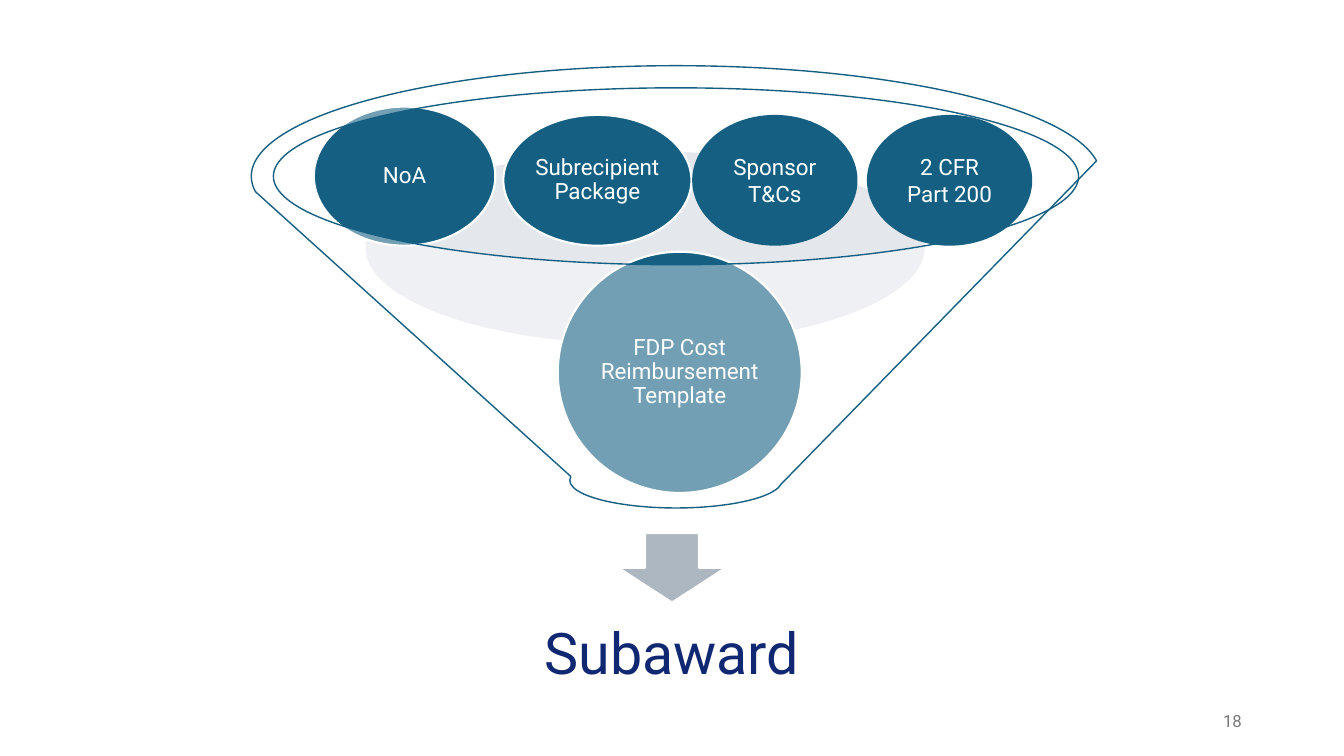
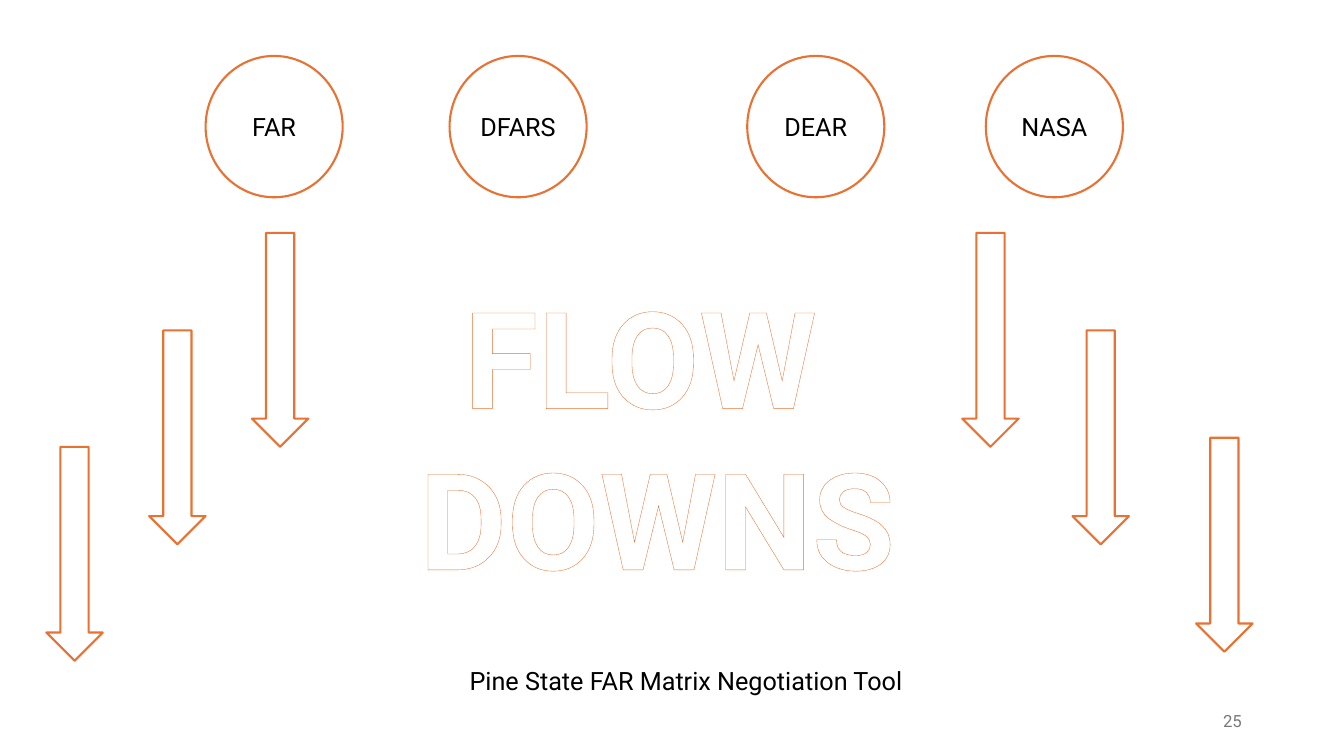
from lxml.etree import SubElement
from pptx import Presentation
from pptx.dml.color import RGBColor
from pptx.enum.shapes import MSO_SHAPE
from pptx.enum.text import MSO_ANCHOR, MSO_AUTO_SIZE, PP_ALIGN
from pptx.oxml import parse_xml
from pptx.oxml.ns import nsdecls, qn
from pptx.util import Inches, Pt

WIDTH, HEIGHT = Inches(13.33), Inches(7.5)
FONT = "Roboto"
COLORS = {
    "white": "FFFFFF",
    "black": "000000",
    "navy": "0F2871",
    "teal": "156082",
    "orange": "E97132",
    "arrow": "ACB7C1",
    "mist": "BDC5CD",
    "number": "797979",
}


def rgb(name):
    return RGBColor.from_string(COLORS[name])


def area(left, top, width, height):
    """Turn percentages of the slide into lengths."""
    return (int(WIDTH * left / 100), int(HEIGHT * top / 100),
            int(WIDTH * width / 100), int(HEIGHT * height / 100))


def write(holder, lines, size, color, align=PP_ALIGN.CENTER,
          anchor=MSO_ANCHOR.MIDDLE, spacing=1.0, inset=None, bold=False):
    frame = holder.text_frame
    frame.text = "\n".join(lines)
    frame.word_wrap = True
    frame.auto_size = MSO_AUTO_SIZE.NONE
    frame.vertical_anchor = anchor
    if inset is not None:
        frame.margin_left = frame.margin_right = Inches(inset)
        frame.margin_top = frame.margin_bottom = Inches(inset)
    for paragraph in frame.paragraphs:
        paragraph.alignment = align
        paragraph.line_spacing = spacing
        paragraph.font.name = FONT
        paragraph.font.size = Pt(size)
        paragraph.font.bold = bold
        paragraph.font.color.rgb = rgb(color)


def add_title(slide, box, lines, size, color, **style):
    title = slide.shapes.title
    title.left, title.top, title.width, title.height = area(*box)
    write(title, lines, size, color, **style)
    return title


def add_label(slide, box, text, size, color, **style):
    label = slide.shapes.add_textbox(*area(*box))
    write(label, [text], size, color, **style)


def add_figure(slide, kind, box, fill, line=None, weight=1.5, opacity=None):
    figure = slide.shapes.add_shape(kind, *area(*box))
    figure.shadow.inherit = False
    figure.fill.solid()
    figure.fill.fore_color.rgb = rgb(fill)
    if opacity:
        fill_color = figure.fill._xPr.find(".//" + qn("a:srgbClr"))
        SubElement(fill_color, qn("a:alpha"), val=str(opacity * 1000))
    if line:
        figure.line.color.rgb = rgb(line)
        figure.line.width = Pt(weight)
    else:
        figure.line.fill.background()
    return figure


def outline_text(holder, color, weight):
    for paragraph in holder.text_frame.paragraphs:
        for run in paragraph.runs:
            run.font.color.rgb = rgb("white")
            run.font._element.insert(0, parse_xml(
                f'<a:ln {nsdecls("a")} w="{Pt(weight)}"><a:solidFill>'
                f'<a:srgbClr val="{COLORS[color]}"/></a:solidFill></a:ln>'))


def start_slide(deck, number):
    slide = deck.slides.add_slide(deck.slide_layouts.get_by_name("Title Only"))
    add_label(slide, (70.65, 92.7, 22.5, 5.3), number, 12, "number",
              align=PP_ALIGN.RIGHT)
    return slide


def build_funnel(deck):
    slide = start_slide(deck, "18")
    add_figure(slide, MSO_SHAPE.OVAL, (27.2, 20, 41.6, 25.6), "mist", opacity=40)

    # Result below the funnel
    add_figure(slide, MSO_SHAPE.DOWN_ARROW, (46, 70.5, 8, 9.2), "arrow", "white")
    add_title(slide, (30.7, 78.1, 38.6, 17.2), ["Subaward"], 41, "navy",
              spacing=0.9, inset=0.32)

    # Documents inside the funnel
    inside = [
        ("FDP Cost Reimbursement Template", (41.5, 33.3, 18.15, 31.9)),
        ("NoA", (23.35, 14.1, 13.5, 18.4)),
        ("Subrecipient Package", (37.45, 15.2, 14, 17.3)),
    ]
    for text, box in inside:
        document = add_figure(slide, MSO_SHAPE.OVAL, box, "teal", "white")
        write(document, [text], 16, "white", spacing=0.9, inset=0.02)

    add_figure(slide, MSO_SHAPE.FUNNEL, (18.7, 8.7, 63.2, 58.5), "white",
               "teal", weight=1, opacity=40)

    # Documents in front of the funnel
    for text, left in (("2 CFR Part 200", 64.5), ("Sponsor T&Cs", 51.5)):
        document = add_figure(slide, MSO_SHAPE.FLOWCHART_CONNECTOR,
                              (left, 15.2, 12.3, 17.3), "teal")
        write(document, [text], 16, "white")


def build_flow_downs(deck):
    slide = start_slide(deck, "25")
    heading = add_title(slide, (29.1, 35.6, 39.6, 44.4), ["FLOW ", "DOWNS"],
                        96, "white", anchor=MSO_ANCHOR.TOP, bold=True)
    outline_text(heading, "orange", 0.52)

    # Regulations
    regulations = {"FAR": 15.3, "DFARS": 33.45, "DEAR": 55.6, "NASA": 73.35}
    for text, left in regulations.items():
        regulation = add_figure(slide, MSO_SHAPE.FLOWCHART_CONNECTOR,
                                (left, 7.4, 10.2, 18.7), "white", "orange")
        write(regulation, [text], 18, "black", inset=0.02)

    # Arrows stepping down to both sides
    steps = [(3.45, 59.1), (11.1, 43.7), (18.75, 30.8),
             (71.6, 30.8), (79.8, 43.7), (89, 57.9)]
    for left, top in steps:
        add_figure(slide, MSO_SHAPE.DOWN_ARROW, (left, top, 4.2, 28.3),
                   "white", "orange")

    add_label(slide, (34.2, 87.3, 37.5, 5.3),
              "Pine State FAR Matrix Negotiation Tool", 18, "black",
              align=PP_ALIGN.LEFT, anchor=MSO_ANCHOR.TOP)


def main():
    deck = Presentation()
    deck.slide_width, deck.slide_height = WIDTH, HEIGHT
    build_funnel(deck)
    build_flow_downs(deck)
    deck.save("out.pptx")


if __name__ == "__main__":
    main()
